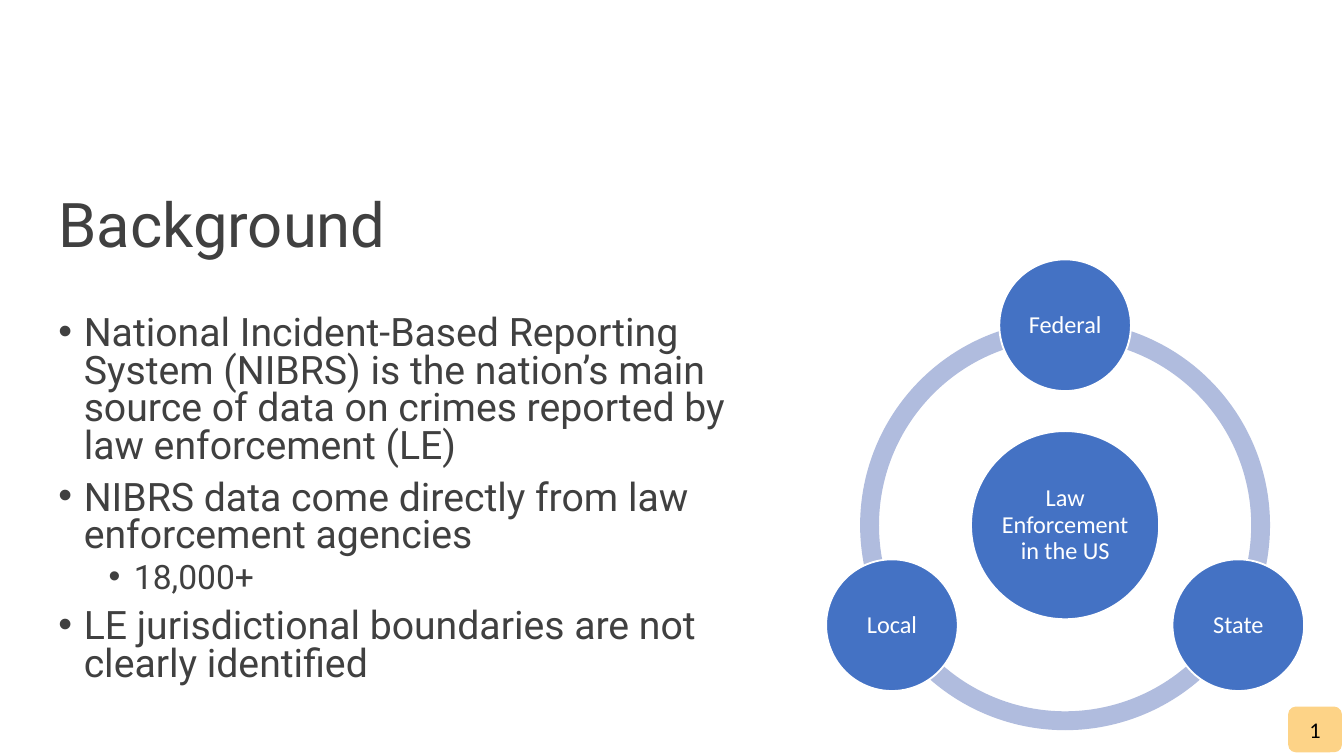
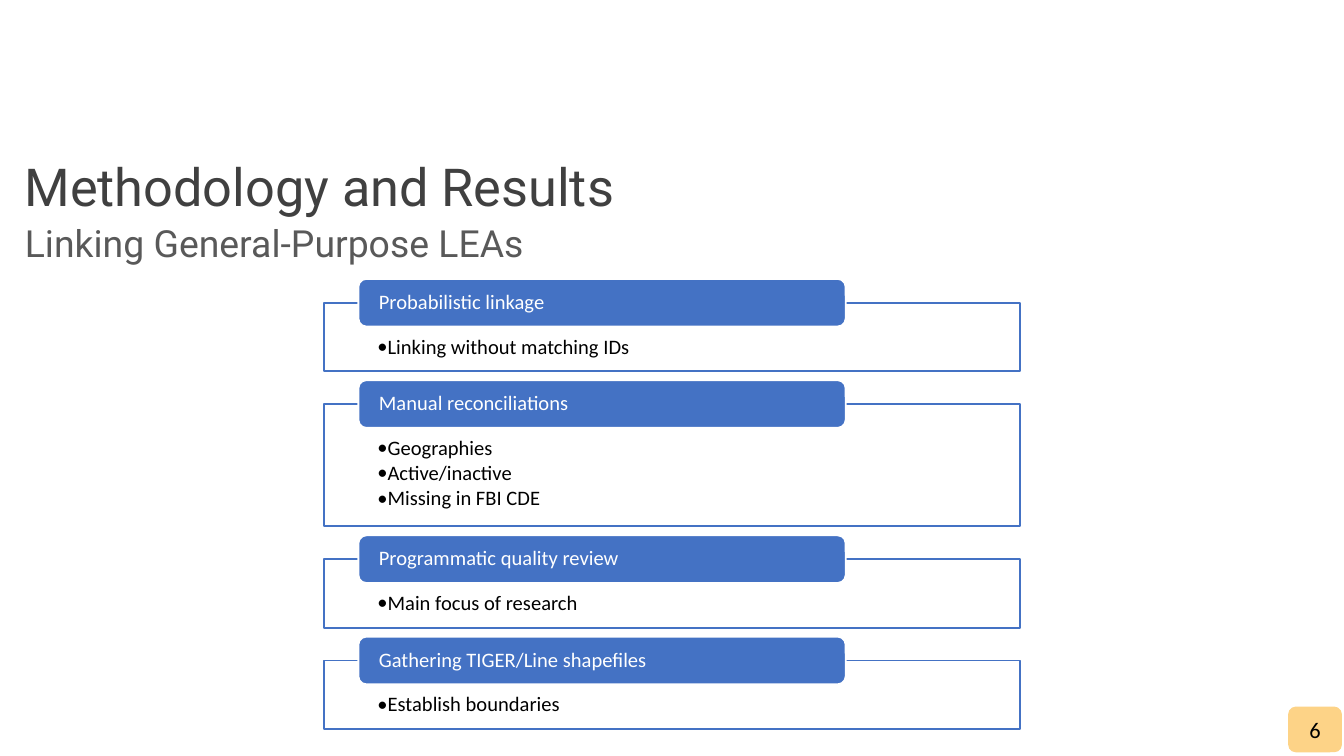
import math
from dataclasses import dataclass

from lxml import etree
from pptx import Presentation
from pptx import util as u
from pptx.dml.color import RGBColor
from pptx.enum import shapes, text
from pptx.oxml import ns

CELL = u.Inches(0.1)
COLUMNS, ROWS = 100, 56.25


@dataclass(frozen=True)
class Theme:
    """Colours, fonts and type sizes shared by the slides."""

    accent: str = "4472C4"
    ring: str = "B0BCDE"
    badge: str = "FDD387"
    white: str = "FFFFFF"
    black: str = "000000"
    heading: str = "404040"
    subheading: str = "595959"
    heading_font: str = "Roboto"
    diagram_font: str = "Calibri"
    title_size: float = 33
    section_size: float = 28
    subtitle_size: float = 20
    body_sizes: tuple = (21, 18)
    circle_size: float = 13
    panel_size: float = 11
    badge_size: float = 12


THEME = Theme()


@dataclass(frozen=True)
class Box:
    """A rectangle measured in columns and rows of the slide grid."""

    left: float
    top: float
    width: float
    height: float

    def inside(self, left, top, width, height):
        """Return a box offset from this box's top left corner."""
        return Box(self.left + left, self.top + top, width, height)

    def lengths(self):
        """Return left, top, width and height as slide lengths."""
        return [round(value * CELL) for value in (self.left, self.top, self.width, self.height)]


def centred_box(x, y, size):
    """Return a square box around a centre."""
    return Box(x - size / 2, y - size / 2, size, size)


def write_paragraph(frame, content, *, size, color, font=THEME.diagram_font, align=None,
                    spacing=0.9, before=0, after=0, indent=None, hanging=0, level=0,
                    bullet_font=None):
    """Add one formatted paragraph, bulleted when an indent is given."""
    first = not frame.paragraphs[0].runs
    paragraph = frame.paragraphs[0] if first else frame.add_paragraph()
    paragraph.level = level
    paragraph.alignment = align or text.PP_ALIGN.LEFT
    paragraph.line_spacing = spacing
    paragraph.space_before = u.Pt(0 if first else before)
    paragraph.space_after = u.Pt(after)
    if indent is not None:
        properties = paragraph._p.get_or_add_pPr()
        properties.set("marL", str(round(indent * CELL)))
        properties.set("indent", str(-round(hanging * CELL)))
        if bullet_font:
            etree.SubElement(properties, ns.qn("a:buFont")).set("typeface", bullet_font)
        etree.SubElement(properties, ns.qn("a:buChar")).set("char", "•")
    run = paragraph.add_run()
    run.text = content
    run.font.name = font
    run.font.size = u.Pt(size)
    run.font.color.rgb = RGBColor.from_string(color)


def set_frame(shape, anchor, insets=None):
    """Set wrapping, anchor and insets of a shape's text and return its frame."""
    frame = shape.text_frame
    frame.word_wrap = True
    frame.auto_size = text.MSO_AUTO_SIZE.NONE
    frame.vertical_anchor = anchor
    if insets:
        frame.margin_left = frame.margin_right = round(insets[0] * CELL)
        frame.margin_top, frame.margin_bottom = (round(inset * CELL) for inset in insets[1:])
    return frame


def draw_shape(parent, kind, box, fill, line=None, alpha=None):
    """Draw a flat preset shape."""
    shape = parent.add_shape(kind, *box.lengths())
    shape.shadow.inherit = False
    shape.fill.solid()
    shape.fill.fore_color.rgb = RGBColor.from_string(fill)
    if alpha:
        color = shape._element.spPr.find(".//" + ns.qn("a:srgbClr"))
        etree.SubElement(color, ns.qn("a:alpha")).set("val", str(alpha * 1000))
    if line:
        shape.line.color.rgb = RGBColor.from_string(line)
        shape.line.width = u.Pt(1)
    else:
        shape.line.fill.background()
    return shape


def place(shape, box):
    """Move and size a placeholder."""
    shape.left, shape.top, shape.width, shape.height = box.lengths()


def write_heading(shape, content, size, color=THEME.heading):
    """Write a heading centred vertically in its shape."""
    frame = set_frame(shape, text.MSO_ANCHOR.MIDDLE)
    write_paragraph(frame, content, size=size, color=color, font=THEME.heading_font)


def write_bullets(placeholder, box, items):
    """Fill the body placeholder with a list of levels and texts."""
    place(placeholder, box)
    frame = set_frame(placeholder, text.MSO_ANCHOR.TOP)
    for level, content in items:
        write_paragraph(frame, content, size=THEME.body_sizes[level], color=THEME.heading,
                        font=THEME.heading_font, spacing=0.8, before=(7.5, 3.8)[level],
                        indent=(1.88, 5.62)[level], hanging=1.88, level=level)


def draw_badge(slide, box, number):
    """Draw the slide number badge."""
    badge = draw_shape(slide.shapes, shapes.MSO_SHAPE.ROUNDED_RECTANGLE, box, THEME.badge)
    frame = set_frame(badge, text.MSO_ANCHOR.MIDDLE)
    write_paragraph(frame, str(number), size=THEME.badge_size, color=THEME.black,
                    align=text.PP_ALIGN.CENTER, spacing=1)


def draw_circle(parent, box, label):
    """Draw a labelled circle."""
    circle = draw_shape(parent, shapes.MSO_SHAPE.OVAL, box, THEME.accent, THEME.white)
    frame = set_frame(circle, text.MSO_ANCHOR.MIDDLE, (0.2, 0.2, 0.2))
    write_paragraph(frame, label, size=THEME.circle_size, color=THEME.white,
                    align=text.PP_ALIGN.CENTER)


def draw_orbit(slide, box, centre, satellites):
    """Draw a central circle with satellites evenly spaced on a ring."""
    parent = slide.shapes.add_group_shape().shapes
    ring_size, orbit_radius = 30.5, 14.88
    x = box.left + box.width / 2
    y = box.top + box.height - ring_size / 2
    for start, end in ((90, 162), (18, 90), (162, 18)):
        arc = draw_shape(parent, shapes.MSO_SHAPE.BLOCK_ARC,
                         centred_box(x, y, ring_size), THEME.ring)
        for index, value in enumerate((start * 0.6, end * 0.6, 0.046)):
            arc.adjustments[index] = value
    draw_circle(parent, centred_box(x, y, 14), centre)
    for index, label in enumerate(satellites):
        angle = 2 * math.pi * index / len(satellites)
        draw_circle(parent, centred_box(x + orbit_radius * math.sin(angle),
                                        y - orbit_radius * math.cos(angle), 9.8), label)


def draw_panel(parent, box, header_height, header, items):
    """Draw an outlined panel with a header straddling its top edge."""
    panel = draw_shape(parent, shapes.MSO_SHAPE.RECTANGLE, box, THEME.white, THEME.accent, alpha=90)
    frame = set_frame(panel, text.MSO_ANCHOR.TOP, (4, 2.5, 0.9))
    for item in items:
        write_paragraph(frame, item, size=THEME.panel_size, color=THEME.black, after=1.65,
                        indent=0.62, hanging=0.62, level=1, bullet_font=THEME.diagram_font)
    header_box = box.inside(box.width * 0.05, -header_height / 2, box.width * 0.7, header_height)
    tab = draw_shape(parent, shapes.MSO_SHAPE.ROUNDED_RECTANGLE, header_box,
                     THEME.accent, THEME.white)
    frame = set_frame(tab, text.MSO_ANCHOR.MIDDLE, (1.35, 0, 0))
    write_paragraph(frame, header, size=THEME.panel_size, color=THEME.white)


def draw_panels(slide, box, panels):
    """Stack panels sized by their line counts with equal gaps."""
    parent = slide.shapes.add_group_shape().shapes
    header_height = 3.55
    heights = [3.1 + 2 * len(items) for _, items in panels]
    gap = (box.height - header_height / 2 - sum(heights)) / (len(panels) - 1)
    top = header_height / 2
    for (header, items), height in zip(panels, heights):
        draw_panel(parent, box.inside(0, top, box.width, height), header_height, header, items)
        top += height + gap


def add_slide(presentation, layout, title, box, number, size, color=THEME.heading):
    """Add a slide with its title and number badge."""
    slide = presentation.slides.add_slide(presentation.slide_layouts[layout])
    place(slide.shapes.title, box)
    write_heading(slide.shapes.title, title, size, color)
    draw_badge(slide, Box(COLUMNS - 4.15, ROWS - 3.67, 4, 3.4), number)
    return slide


def build_background(presentation):
    """Build the background slide."""
    slide = add_slide(presentation, 1, "Background", Box(3.35, 11.5, 93.3, 10.9), 1,
                      THEME.title_size)
    write_bullets(slide.placeholders[1], Box(3.35, 23.05, 53.9, 30.5), (
        (0, "National Incident-Based Reporting System (NIBRS) is the nation’s main "
            "source of data on crimes reported by law enforcement (LE)"),
        (0, "NIBRS data come directly from law enforcement agencies"),
        (1, "18,000+"),
        (0, "LE jurisdictional boundaries are not clearly identified"),
    ))
    draw_orbit(slide, Box(61.5, 19.33, 35.5, 35), "Law Enforcement in the US",
               ("Federal", "State", "Local"))


def build_methodology(presentation):
    """Build the methodology slide."""
    slide = add_slide(presentation, 5, "Linking General-Purpose LEAs",
                      Box(0.85, 12.8, 93.3, 10.9), 6, THEME.subtitle_size, THEME.subheading)
    section = slide.shapes.add_textbox(*Box(0.85, 8.65, 93.3, 10.9).lengths())
    write_heading(section, "Methodology and Results", THEME.section_size)
    draw_panels(slide, Box(24.08, 20.75, 51.8, 33.5), (
        ("Probabilistic linkage", ("Linking without matching IDs",)),
        ("Manual reconciliations", ("Geographies", "Active/inactive", "Missing in FBI CDE")),
        ("Programmatic quality review", ("Main focus of research",)),
        ("Gathering TIGER/Line shapefiles", ("Establish boundaries",)),
    ))


def main():
    """Build and save the presentation."""
    presentation = Presentation()
    presentation.slide_width = round(COLUMNS * CELL)
    presentation.slide_height = round(ROWS * CELL)
    build_background(presentation)
    build_methodology(presentation)
    presentation.save("out.pptx")


if __name__ == "__main__":
    main()
